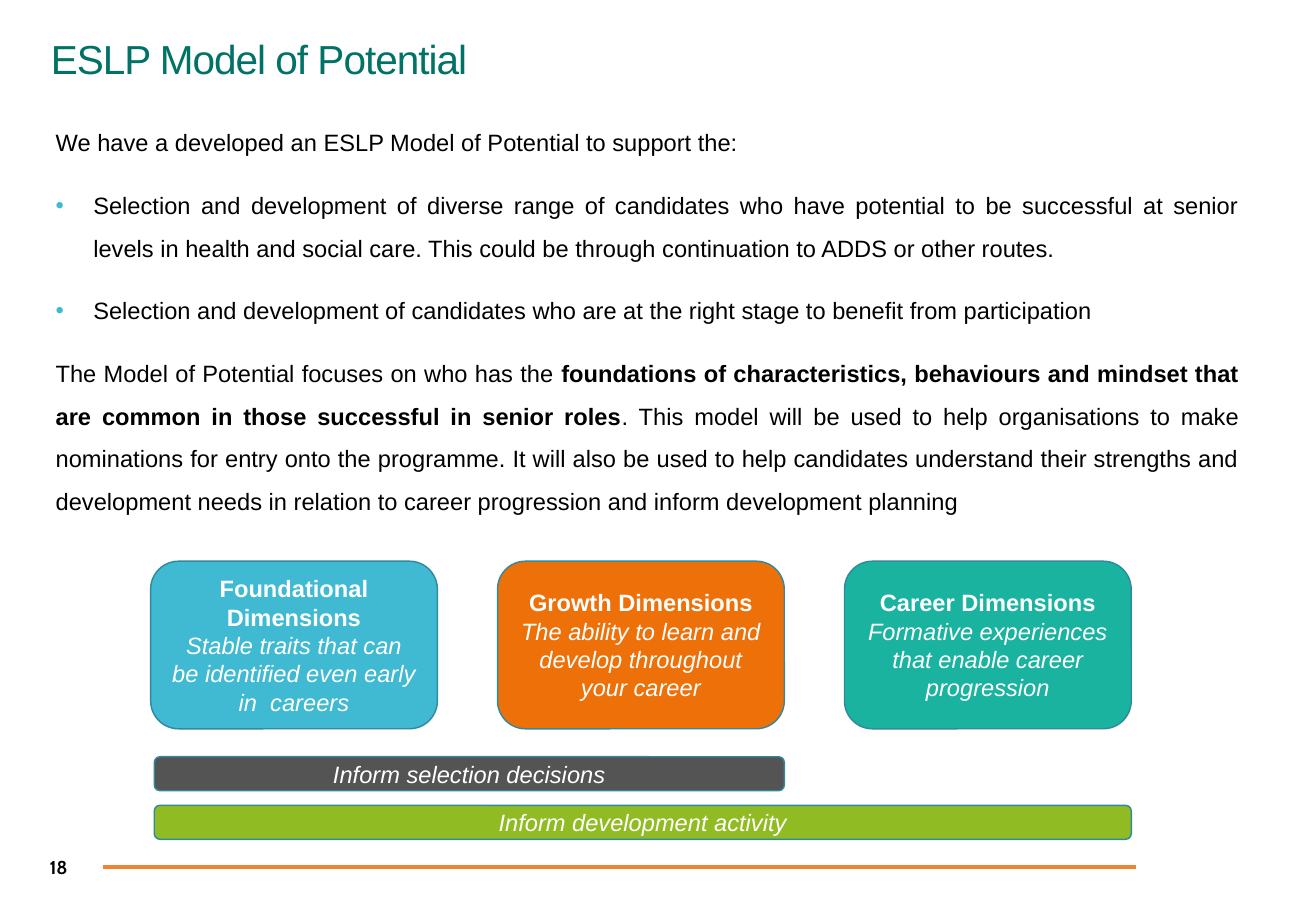
from lxml import etree
from pptx import Presentation
from pptx.dml.color import RGBColor
from pptx.enum.shapes import MSO_CONNECTOR, MSO_SHAPE
from pptx.enum.text import MSO_ANCHOR, PP_ALIGN
from pptx.oxml.ns import qn
from pptx.util import Inches, Pt

LINE, ROUND = MSO_CONNECTOR.STRAIGHT, MSO_SHAPE.ROUNDED_RECTANGLE
TOP, MIDDLE = MSO_ANCHOR.TOP, MSO_ANCHOR.MIDDLE
LEFT, CENTER, JUSTIFY = PP_ALIGN.LEFT, PP_ALIGN.CENTER, PP_ALIGN.JUSTIFY

WHITE, BLACK = RGBColor(255, 255, 255), RGBColor(0, 0, 0)
PINE, EDGE = RGBColor(0x00, 0x72, 0x66), RGBColor(0x2F, 0x8A, 0x9B)
BLUE, TEAL = RGBColor(0x40, 0xBA, 0xD2), RGBColor(0x1A, 0xB3, 0x9F)
ORANGE, RULE = RGBColor(0xEE, 0x70, 0x08), RGBColor(0xEF, 0x82, 0x33)
GREY, GREEN = RGBColor(0x54, 0x54, 0x54), RGBColor(0x90, 0xBB, 0x23)

BODY = {"name": "Arial", "size": Pt(14)}
BOLD, ITALIC = {"bold": True}, {"italic": True}

TITLE = "ESLP Model of Potential"
NUMBER = "18"
# Each paragraph: has a bullet, runs
INTRO = [
    (False, [("We have a developed an ESLP Model of Potential to support the:", {})]),
    (True, [("Selection and development of diverse range of candidates who have "
             "potential to be successful at senior levels in health and social care. "
             "This could be through continuation to ADDS or other routes.", {})]),
    (True, [("Selection and development of candidates who are at the right stage "
             "to benefit from participation", {})]),
    (False, [("The Model of Potential focuses on who has the ", {}),
             ("foundations of characteristics, behaviours and mindset that are "
              "common in those successful in senior roles", BOLD),
             (". This model will be used to help organisations to make nominations "
              "for entry onto the programme. It will also be used to help candidates "
              "understand their strengths and development needs in relation to career "
              "progression and inform development planning", {})]),
]
CARDS = [
    ("Foundational Dimensions",
     "Stable traits that can be identified even early in  careers", BLUE),
    ("Growth Dimensions",
     "The ability to learn and develop throughout your career", ORANGE),
    ("Career Dimensions",
     "Formative experiences that enable career progression", TEAL),
]
# Each bar: text, number of cards it spans, fill
BARS = [("Inform selection decisions", 2, GREY),
        ("Inform development activity", 3, GREEN)]

CARD_X, CARD_Y, CARD_W, CARD_H, CARD_STEP = 1.24, 4.62, 2.36, 1.38, 2.855
BAR_X, BAR_Y, BAR_H, BAR_STEP = 1.27, 6.23, 0.28, 0.4


def style(font, color, looks):
    font.color.rgb = color
    for key, value in looks.items():
        setattr(font, key, value)


def write(frame, paras, color, align, base=BODY, anchor=TOP):
    """Fill a frame with paragraphs, each a list of (text, looks) runs."""
    frame.word_wrap = True
    frame.vertical_anchor = anchor
    for i, runs in enumerate(paras):
        para = frame.add_paragraph() if i else frame.paragraphs[0]
        para.alignment = align
        for text, looks in runs:
            run = para.add_run()
            run.text = text
            style(run.font, color, {**base, **looks})


def add_text(slide, box, paras, color, align, **extra):
    frame = slide.shapes.add_textbox(*map(Inches, box)).text_frame
    write(frame, paras, color, align, **extra)
    return frame


def add_block(slide, box, fill, paras):
    shape = slide.shapes.add_shape(ROUND, *map(Inches, box))
    shape.shadow.inherit = False
    shape.fill.solid()
    shape.fill.fore_color.rgb = fill
    shape.line.color.rgb = EDGE
    shape.line.width = Pt(0.85)
    write(shape.text_frame, paras, WHITE, CENTER, anchor=MIDDLE)


def add_bullet(para):
    props = para._p.get_or_add_pPr()
    props.set("marL", str(Inches(0.31)))
    props.set("indent", str(-Inches(0.31)))
    color = etree.SubElement(props, qn("a:buClr"))
    etree.SubElement(color, qn("a:srgbClr"), val=str(BLUE))
    etree.SubElement(props, qn("a:buFont"), typeface="Arial")
    etree.SubElement(props, qn("a:buChar"), char="•")


def add_rule(slide):
    ends = map(Inches, (0.85, 7.14, 9.35, 7.14))
    rule = slide.shapes.add_connector(LINE, *ends)
    rule.line.color.rgb = RULE
    rule.line.width = Pt(2.25)
    etree.SubElement(rule._element.spPr, qn("a:effectLst"))


def main():
    deck = Presentation()
    deck.slide_width, deck.slide_height = Inches(10.83), Inches(7.5)
    slide = deck.slides.add_slide(deck.slide_layouts[6])

    add_rule(slide)
    add_text(slide, (0.31, 6.94, 1.36, 0.4), [[(NUMBER, BOLD)]], BLACK, LEFT,
             base={"name": "Cabin", "size": Pt(11)}, anchor=MIDDLE)

    title = add_text(slide, (0.32, 0.28, 8.5, 1.33), [[(TITLE, {})]], PINE, LEFT,
                     base={"name": "Arial", "size": Pt(24)}).paragraphs[0]
    title.line_spacing = 0.9
    title.runs[0]._r.get_or_add_rPr().set("spc", "-60")

    intro = add_text(slide, (0.36, 0.89, 9.94, 4.76), [runs for _, runs in INTRO],
                     BLACK, JUSTIFY)
    for i, (para, (bullet, _)) in enumerate(zip(intro.paragraphs, INTRO)):
        para.line_spacing = 1.5
        para.space_before = Pt(12 if i else 0)
        if bullet:
            add_bullet(para)

    for i, (head, text, fill) in enumerate(CARDS):
        box = (CARD_X + i * CARD_STEP, CARD_Y, CARD_W, CARD_H)
        add_block(slide, box, fill, [[(head, BOLD)], [(text, ITALIC)]])

    for i, (text, span, fill) in enumerate(BARS):
        right = CARD_X + (span - 1) * CARD_STEP + CARD_W
        box = (BAR_X, BAR_Y + i * BAR_STEP, right - BAR_X, BAR_H)
        add_block(slide, box, fill, [[(text, ITALIC)]])

    deck.save("out.pptx")


if __name__ == "__main__":
    main()
